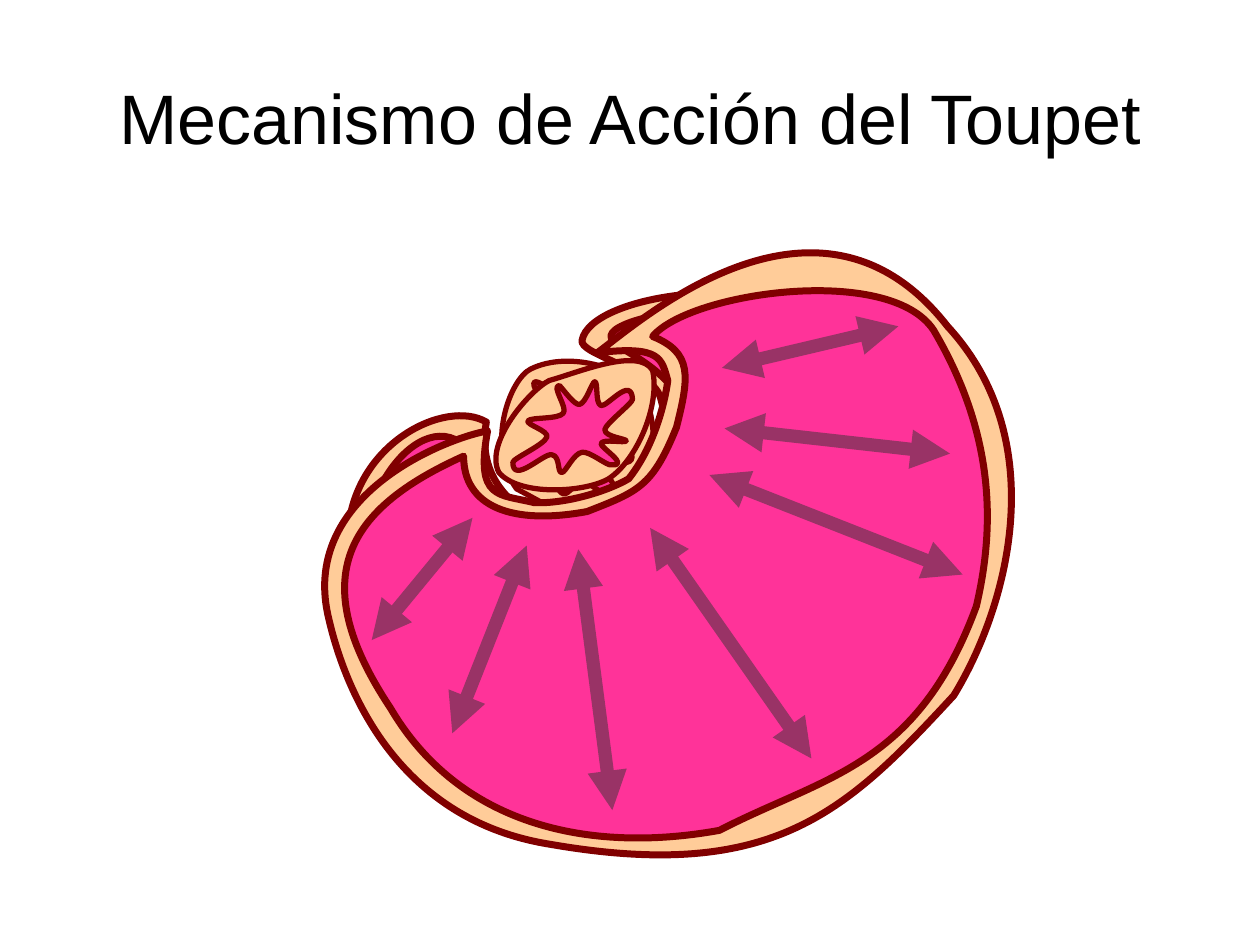
from dataclasses import dataclass

from lxml import etree
from pptx import Presentation
from pptx.dml.color import RGBColor
from pptx.enum import shapes, text
from pptx.oxml import ns
from pptx.util import Pt

PEACH = RGBColor(0xFF, 0xCC, 0x99)
PINK = RGBColor(0xFF, 0x33, 0x99)
MAROON = RGBColor(0x80, 0x00, 0x00)
PLUM = RGBColor(0x99, 0x33, 0x66)
BLACK = RGBColor(0x00, 0x00, 0x00)

UNIT = Pt(0.72)  # drawing grid: 100 units to the inch
ARROW_WIDTH = 7.5

Point = tuple[int, int]


@dataclass(frozen=True)
class Outline:
    """A closed curve: its start, then two handles and an end per Bézier segment."""

    fill: RGBColor
    line_width: float
    start: Point
    curves: list[Point]


@dataclass(frozen=True)
class Arrow:
    start: Point
    end: Point


REAR_STOMACH = [
    Outline(PEACH, 4, (276, 426), [
        (272, 458), (294, 540), (418, 559), (418, 559), (543, 580), (622, 481),
        (622, 481), (713, 343), (630, 252), (603, 217), (469, 234), (462, 270),
        (459, 281), (516, 292), (524, 315), (524, 315), (543, 373), (508, 407),
        (475, 434), (462, 426), (434, 416), (401, 400), (379, 375), (386, 335),
        (354, 316), (279, 352), (276, 426)]),
    Outline(PINK, 4, (304, 464), [
        (338, 509), (396, 556), (501, 537), (589, 499), (601, 496), (642, 396),
        (650, 340), (647, 294), (609, 258), (569, 237), (496, 251), (486, 264),
        (476, 277), (535, 284), (549, 338), (549, 338), (558, 385), (523, 418),
        (489, 445), (474, 454), (445, 445), (413, 432), (376, 391), (369, 354),
        (329, 318), (265, 416), (304, 464)]),
]
REAR_ESOPHAGUS = [
    Outline(PEACH, 3, (421, 293), [
        (405, 301), (385, 353), (410, 388), (448, 408), (458, 418), (488, 407),
        (510, 393), (529, 362), (512, 313), (501, 294), (453, 277), (421, 293)]),
    Outline(PINK, 3, (425, 303), [
        (419, 303), (434, 322), (430, 328), (428, 334), (413, 335), (413, 339),
        (412, 344), (424, 351), (425, 357), (426, 363), (417, 374), (419, 378),
        (419, 396), (430, 375), (435, 378), (440, 380), (443, 391), (447, 392),
        (452, 393), (456, 382), (462, 382), (467, 382), (479, 394), (482, 392),
        (498, 393), (478, 376), (481, 371), (484, 367), (499, 369), (501, 365),
        (504, 360), (495, 352), (495, 344), (495, 337), (504, 323), (501, 319),
        (501, 300), (484, 323), (478, 320), (472, 318), (470, 306), (465, 305),
        (460, 303), (452, 314), (446, 314), (439, 314), (431, 303), (425, 303)]),
]
FRONT_STOMACH = [
    Outline(PEACH, 4, (260, 487), [
        (272, 542), (312, 650), (436, 670), (614, 701), (672, 644), (757, 552),
        (801, 480), (835, 349), (752, 259), (649, 127), (506, 257), (474, 280),
        (525, 274), (525, 285), (530, 302), (530, 302), (525, 347), (499, 380),
        (482, 390), (449, 400), (424, 399), (396, 392), (377, 397), (387, 342),
        (354, 348), (240, 392), (260, 487)]),
    Outline(PINK, 4, (310, 562), [
        (364, 654), (466, 678), (571, 659), (654, 616), (728, 609), (775, 481),
        (788, 425), (793, 350), (741, 262), (706, 209), (547, 232), (518, 267),
        (550, 280), (547, 299), (537, 339), (518, 386), (507, 390), (466, 406),
        (406, 417), (368, 402), (368, 362), (277, 403), (240, 457), (310, 562)]),
]
FRONT_ESOPHAGUS = [
    Outline(PEACH, 3, (436, 302), [
        (420, 310), (384, 352), (396, 375), (412, 394), (464, 391), (483, 380),
        (506, 365), (524, 321), (518, 294), (507, 275), (458, 296), (436, 302)]),
    Outline(PINK, 3, (444, 306), [
        (437, 306), (451, 324), (447, 328), (443, 333), (422, 331), (419, 334),
        (417, 337), (436, 342), (434, 347), (432, 353), (407, 364), (407, 367),
        (407, 385), (432, 359), (438, 361), (445, 362), (442, 376), (446, 375),
        (449, 375), (455, 360), (462, 359), (468, 358), (482, 370), (485, 369),
        (501, 370), (476, 355), (477, 352), (479, 348), (496, 352), (497, 350),
        (497, 348), (480, 347), (480, 341), (481, 336), (502, 320), (502, 317),
        (501, 298), (482, 323), (477, 322), (472, 320), (475, 303), (472, 303),
        (470, 303), (465, 320), (460, 321), (456, 322), (447, 309), (444, 306)]),
]
OUTLINES = REAR_STOMACH + REAR_ESOPHAGUS + FRONT_STOMACH + FRONT_ESOPHAGUS

PRESSURE_ARROWS = [
    Arrow((295, 508), (375, 411)),
    Arrow((644, 602), (516, 419)),
    Arrow((486, 643), (459, 436)),
    Arrow((713, 259), (573, 292)),
    Arrow((754, 360), (575, 340)),
    Arrow((764, 456), (563, 377)),
    Arrow((359, 582), (418, 433)),
]


def bend_segments(shape) -> None:
    """Turn every three straight segments of the path into one cubic Bézier."""
    lines = list(shape.element.iter(ns.qn("a:lnTo")))
    for first in range(0, len(lines), 3):
        curve = etree.Element(ns.qn("a:cubicBezTo"))
        lines[first].addprevious(curve)
        for line in lines[first:first + 3]:
            curve.append(line[0])
            line.getparent().remove(line)


def draw_outline(slide, outline: Outline) -> None:
    builder = slide.shapes.build_freeform(*outline.start, scale=float(UNIT))
    builder.add_line_segments(outline.curves, close=True)
    shape = builder.convert_to_shape()
    bend_segments(shape)
    shape.shadow.inherit = False
    shape.fill.solid()
    shape.fill.fore_color.rgb = outline.fill
    shape.line.color.rgb = MAROON
    shape.line.width = Pt(outline.line_width)
    etree.SubElement(shape.line._get_or_add_ln(), ns.qn("a:round"))


def draw_arrow(slide, arrow: Arrow) -> None:
    ends = [UNIT * value for value in arrow.start + arrow.end]
    connector = slide.shapes.add_connector(shapes.MSO_CONNECTOR.STRAIGHT, *ends)
    connector.line.color.rgb = PLUM
    connector.line.width = Pt(ARROW_WIDTH)
    line = connector.line._get_or_add_ln()
    for tag in ("a:headEnd", "a:tailEnd"):
        etree.SubElement(line, ns.qn(tag), type="triangle")
    etree.SubElement(connector.element.spPr, ns.qn("a:effectLst"))


def add_title(slide, wording: str) -> None:
    title = slide.shapes.title
    title.left, title.top, title.width, title.height = Pt(36), Pt(21.6), Pt(648), Pt(90)
    title.text_frame.text = wording
    title.text_frame.vertical_anchor = text.MSO_ANCHOR.MIDDLE
    paragraph = title.text_frame.paragraphs[0]
    paragraph.alignment = text.PP_ALIGN.CENTER
    paragraph.font.name = "Arial"
    paragraph.font.size = Pt(40)
    paragraph.font.color.rgb = BLACK


def main() -> None:
    presentation = Presentation()
    presentation.slide_width, presentation.slide_height = Pt(720), Pt(540)
    slide = presentation.slides.add_slide(presentation.slide_layouts.get_by_name("Title Only"))
    add_title(slide, "Mecanismo de Acción del Toupet")
    for outline in OUTLINES:
        draw_outline(slide, outline)
    for arrow in PRESSURE_ARROWS:
        draw_arrow(slide, arrow)
    presentation.save("out.pptx")


if __name__ == "__main__":
    main()
